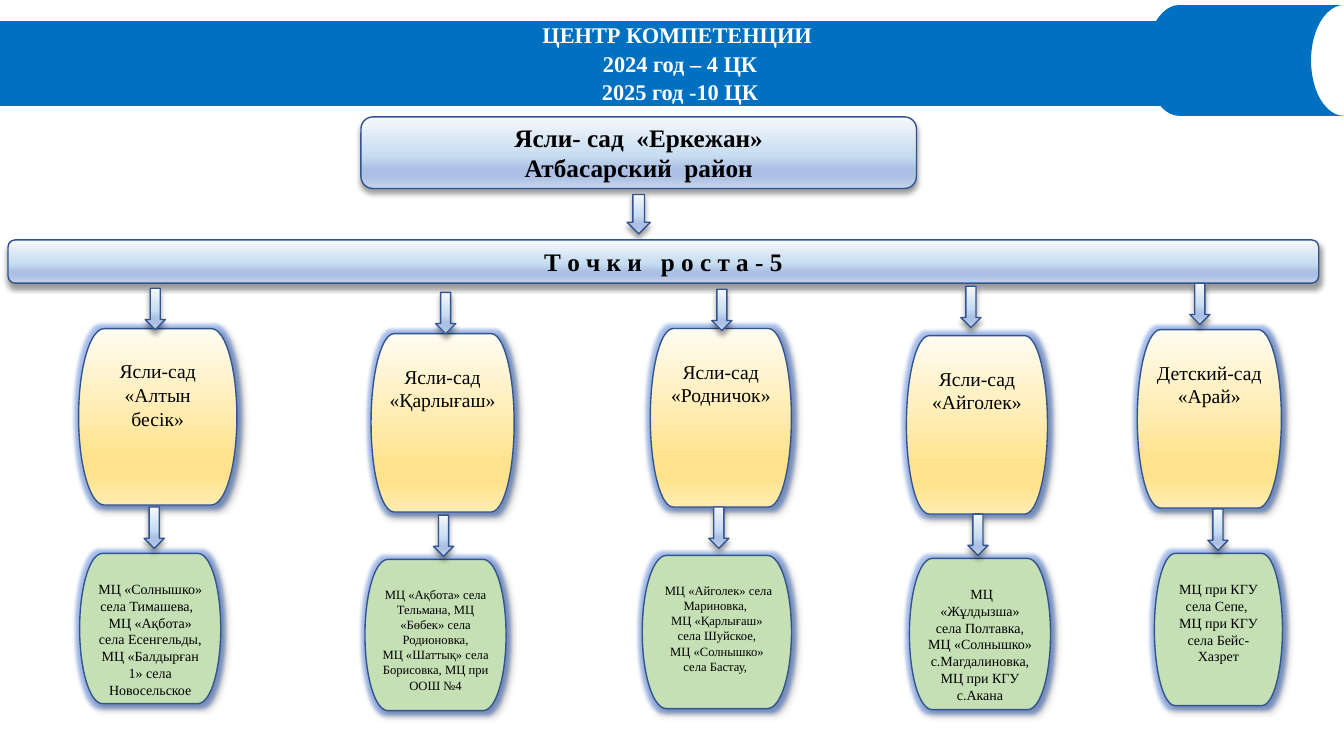
from dataclasses import dataclass

from lxml import etree
from pptx import Presentation
from pptx.dml.color import RGBColor
from pptx.enum.shapes import MSO_SHAPE
from pptx.enum.text import MSO_ANCHOR, MSO_AUTO_SIZE, PP_ALIGN
from pptx.oxml.ns import qn
from pptx.util import Inches, Pt

RECTANGLE = MSO_SHAPE.RECTANGLE
ROUNDED = MSO_SHAPE.ROUNDED_RECTANGLE
STORED_DATA = MSO_SHAPE.FLOWCHART_STORED_DATA
TERMINATOR = MSO_SHAPE.FLOWCHART_TERMINATOR
DOWN_ARROW = MSO_SHAPE.DOWN_ARROW
CENTER = PP_ALIGN.CENTER
TOP = MSO_ANCHOR.TOP
MIDDLE = MSO_ANCHOR.MIDDLE
FIT_SHAPE = MSO_AUTO_SIZE.SHAPE_TO_FIT_TEXT
NO_FIT = MSO_AUTO_SIZE.NONE

FONT = "Times New Roman"
HEADER_BLUE, OUTLINE, GREEN = "0070C0", "325491", "C5E0B4"
BLACK, WHITE, GLOW = "000000", "FFFFFF", "3C74E0"
BLUE_STOPS = [(0, "F6F8FC"), (54, "C7DDF1"), (74, "ABC0E4"), (83, "ABC0E4"), (100, "C7D5ED")]
YELLOW_STOPS = [(0, "FFFCF2"), (74, "FFE38C"), (83, "FFE38C"), (100, "FFECB2")]
ARROW_SIZE = (0.2, 0.41)


@dataclass
class Card:
    place: tuple[float, float, float, float]
    arrow: tuple[float, float]
    lines: list[str]
    size: int


GARDENS = [
    Card((0.78, 3.26, 1.57, 1.75), (1.44, 2.86), ["Ясли-сад «Алтын бесік»"], 14),
    Card((3.68, 3.31, 1.42, 1.77), (4.32, 2.9), ["Ясли-сад «Қарлығаш»"], 14),
    Card((6.45, 3.26, 1.4, 1.77), (7.06, 2.87), ["Ясли-сад «Родничок»"], 14),
    Card((8.99, 3.33, 1.4, 1.77), (9.53, 2.84), ["Ясли-сад «Айголек»"], 14),
    Card((11.28, 3.27, 1.43, 1.77), (11.8, 2.81), ["Детский-сад «Арай»"], 14),
]
CENTERS = [
    Card((0.79, 5.49, 1.4, 1.49), (1.43, 5.03),
         ["МЦ «Солнышко» села Тимашева,  ",
          "МЦ «Ақбота» села Есенгельды, МЦ «Балдырған 1» села Новосельское"], 10),
    Card((3.62, 5.55, 1.4, 1.5), (4.3, 5.11),
         ["МЦ «Ақбота» села Тельмана, МЦ «Бөбек» села Родионовка,",
          "МЦ «Шаттық» села Борисовка, МЦ при ООШ №4"], 9),
    Card((6.37, 5.51, 1.48, 1.52), (7.03, 5.03),
         [" МЦ «Айголек» села Мариновка, ", "МЦ «Қарлығаш» села Шуйское,",
          "МЦ «Солнышко» села Бастау, "], 9),
    Card((9.02, 5.54, 1.4, 1.5), (9.6, 5.1),
         [" МЦ «Жұлдызша» села Полтавка, МЦ «Солнышко» с.Магдалиновка, "
          "МЦ при КГУ с.Акана"], 10),
    Card((11.45, 5.49, 1.27, 1.51), (11.98, 5.05),
         ["МЦ при КГУ села Сепе, ", "МЦ при КГУ села Бейс-Хазрет"], 10),
]


def color(value: str) -> RGBColor:
    return RGBColor.from_string(value)


def add_color(parent, value: str, alpha: int = 100) -> None:
    node = etree.SubElement(parent, qn("a:srgbClr"), val=value)
    if alpha < 100:
        etree.SubElement(node, qn("a:alpha"), val=str(alpha * 1000))


def paint(shape, fill: str | list[tuple[int, str]]) -> None:
    if isinstance(fill, str):
        shape.fill.solid()
        shape.fill.fore_color.rgb = color(fill)
        return
    shape.fill.gradient()
    shape.fill.gradient_angle = 270
    stops = shape._element.spPr.find(qn("a:gradFill")).find(qn("a:gsLst"))
    for stop in list(stops):
        stops.remove(stop)
    for position, value in fill:
        add_color(etree.SubElement(stops, qn("a:gs"), pos=str(position * 1000)), value)


def add_effects(shape, angle: int, glow: bool) -> None:
    effects = shape._element.spPr.find(qn("a:effectLst"))
    if glow:
        halo = etree.SubElement(effects, qn("a:glow"), rad=str(Pt(5)))
        add_color(halo, GLOW, 40)
    shadow = etree.SubElement(effects, qn("a:outerShdw"), blurRad=str(Pt(4)),
                              dist=str(Pt(3)), dir=str(angle * 60000), rotWithShape="0")
    add_color(shadow, BLACK, 40)


def add_block(page, kind, place: tuple[float, float, float, float],
              fill: str | list[tuple[int, str]]):
    shape = page.shapes.add_shape(kind, *map(Inches, place))
    shape.shadow.inherit = False
    paint(shape, fill)
    shape.line.fill.background()
    return shape


def add_framed(page, kind, place: tuple[float, float, float, float],
               fill: str | list[tuple[int, str]], angle: int = 90, glow: bool = False):
    shape = add_block(page, kind, place, fill)
    shape.line.color.rgb = color(OUTLINE)
    shape.line.width = Pt(1)
    add_effects(shape, angle, glow)
    return shape


def write(shape, lines: list[str], size: int, value: str = BLACK,
          bold: bool = False, anchor=MIDDLE) -> None:
    frame = shape.text_frame
    frame.word_wrap = True
    frame.vertical_anchor = anchor
    for index, line in enumerate(lines):
        para = frame.add_paragraph() if index else frame.paragraphs[0]
        para.alignment = CENTER
        span = para.add_run()
        span.text = line
        span.font.name = FONT
        span.font.size = Pt(size)
        span.font.bold = bold
        span.font.color.rgb = color(value)


def add_header(page) -> None:
    add_block(page, RECTANGLE, (0, 0.21, 12.58, 0.84), HEADER_BLUE)
    add_block(page, STORED_DATA, (11.37, 0.05, 1.96, 1.1), HEADER_BLUE)
    title = page.shapes.title
    title.left, title.top, title.width, title.height = map(Inches, (0.78, 0.15, 11.93, 0.94))
    write(title, ["ЦЕНТР КОМПЕТЕНЦИИ ", "2024 год – 4 ЦК", "2025 год -10 ЦК"],
          16, WHITE, True, TOP)
    title.text_frame.auto_size = FIT_SHAPE
    for para in title.text_frame.paragraphs:
        para.line_spacing = 1.05
    page.shapes._spTree.append(title._element)


def add_tier(page, cards: list[Card], fill: str | list[tuple[int, str]]) -> None:
    for card in cards:
        box = add_framed(page, TERMINATOR, card.place, fill, 45, True)
        write(box, card.lines, card.size, anchor=TOP)
        box.text_frame.auto_size = NO_FIT
    for card in cards:
        add_framed(page, DOWN_ARROW, card.arrow + ARROW_SIZE, BLUE_STOPS)


def main() -> None:
    deck = Presentation()
    deck.slide_width, deck.slide_height = Inches(13.33), Inches(7.5)
    page = deck.slides.add_slide(deck.slide_layouts[5])
    add_header(page)
    lead = add_framed(page, ROUNDED, (3.58, 1.16, 5.51, 0.71), BLUE_STOPS)
    write(lead, ["Ясли- сад  «Еркежан»", "Атбасарский  район"], 18, bold=True)
    add_framed(page, DOWN_ARROW, (6.22, 1.93, 0.23, 0.39), BLUE_STOPS)
    growth = add_framed(page, ROUNDED, (0.08, 2.38, 13, 0.43), BLUE_STOPS)
    write(growth, ["Т о ч к и   р о с т а - 5"], 18, bold=True)
    add_tier(page, GARDENS, YELLOW_STOPS)
    add_tier(page, CENTERS, GREEN)
    deck.save("out.pptx")


if __name__ == "__main__":
    main()
